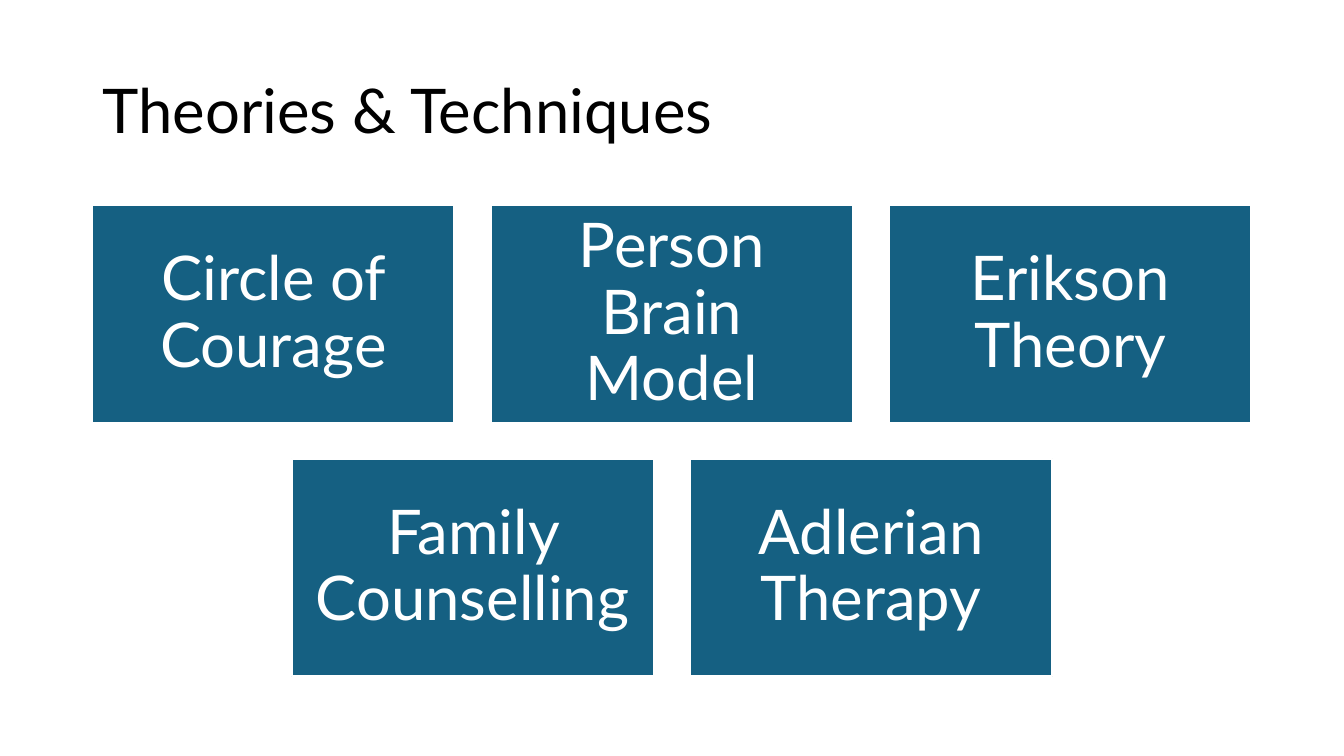
from pptx import Presentation
from pptx import util as u
from pptx.dml.color import RGBColor
from pptx.enum import shapes, text

BLACK = RGBColor(0x00, 0x00, 0x00)
WHITE = RGBColor(0xFF, 0xFF, 0xFF)
TEAL = RGBColor(0x15, 0x60, 0x82)

SLIDE_WIDTH, SLIDE_HEIGHT = 960, 540
CARD_WIDTH, CARD_HEIGHT, GAP = 258.75, 155.25, 25.88
FIRST_ROW_TOP = 146.7
THEORY_ROWS = [
    ["Circle of Courage", "Person Brain Model", "Erikson Theory"],
    ["Family Counselling", "Adlerian Therapy"],
]


class TheorySlide:
    """Holds the text style and the slide being filled."""

    font, size, line_spacing = "Lato", 44, 0.9

    def __init__(self, deck):
        self.slide = deck.slides.add_slide(deck.slide_layouts[5])

    def set_wording(self, frame, wording, color, align):
        frame.text = wording
        frame.word_wrap = True
        frame.auto_size = text.MSO_AUTO_SIZE.NONE
        frame.vertical_anchor = text.MSO_ANCHOR.MIDDLE
        paragraph = frame.paragraphs[0]
        paragraph.alignment = align
        paragraph.line_spacing = self.line_spacing
        paragraph.space_before = u.Pt(0)
        font = paragraph.runs[0].font
        font.name, font.size = self.font, u.Pt(self.size)
        font.color.rgb = color

    def title(self, wording, left, top, width, height):
        heading = self.slide.shapes.title
        heading.left, heading.top = u.Pt(left), u.Pt(top)
        heading.width, heading.height = u.Pt(width), u.Pt(height)
        self.set_wording(heading.text_frame, wording, BLACK, text.PP_ALIGN.LEFT)

    def card(self, wording, left, top):
        card = self.slide.shapes.add_shape(
            shapes.MSO_SHAPE.RECTANGLE,
            u.Pt(left), u.Pt(top), u.Pt(CARD_WIDTH), u.Pt(CARD_HEIGHT))
        card.shadow.inherit = False
        card.fill.solid()
        card.fill.fore_color.rgb = TEAL
        card.line.color.rgb = WHITE
        card.line.width = u.Pt(1.5)
        frame = card.text_frame
        frame.margin_left = frame.margin_right = u.Pt(13.2)
        frame.margin_top = frame.margin_bottom = u.Pt(13.2)
        self.set_wording(frame, wording, WHITE, text.PP_ALIGN.CENTER)

    def centred_row(self, theories, top):
        row_width = len(theories) * (CARD_WIDTH + GAP) - GAP
        start = (SLIDE_WIDTH - row_width) / 2
        for column, theory in enumerate(theories):
            self.card(theory, start + column * (CARD_WIDTH + GAP), top)


def main():
    deck = Presentation()
    deck.slide_width, deck.slide_height = u.Pt(SLIDE_WIDTH), u.Pt(SLIDE_HEIGHT)
    page = TheorySlide(deck)
    page.title("Theories & Techniques", 66, 28.75, 828, 104.4)
    for row, theories in enumerate(THEORY_ROWS):
        page.centred_row(theories, FIRST_ROW_TOP + row * (CARD_HEIGHT + GAP))
    deck.save("out.pptx")


if __name__ == "__main__":
    main()
